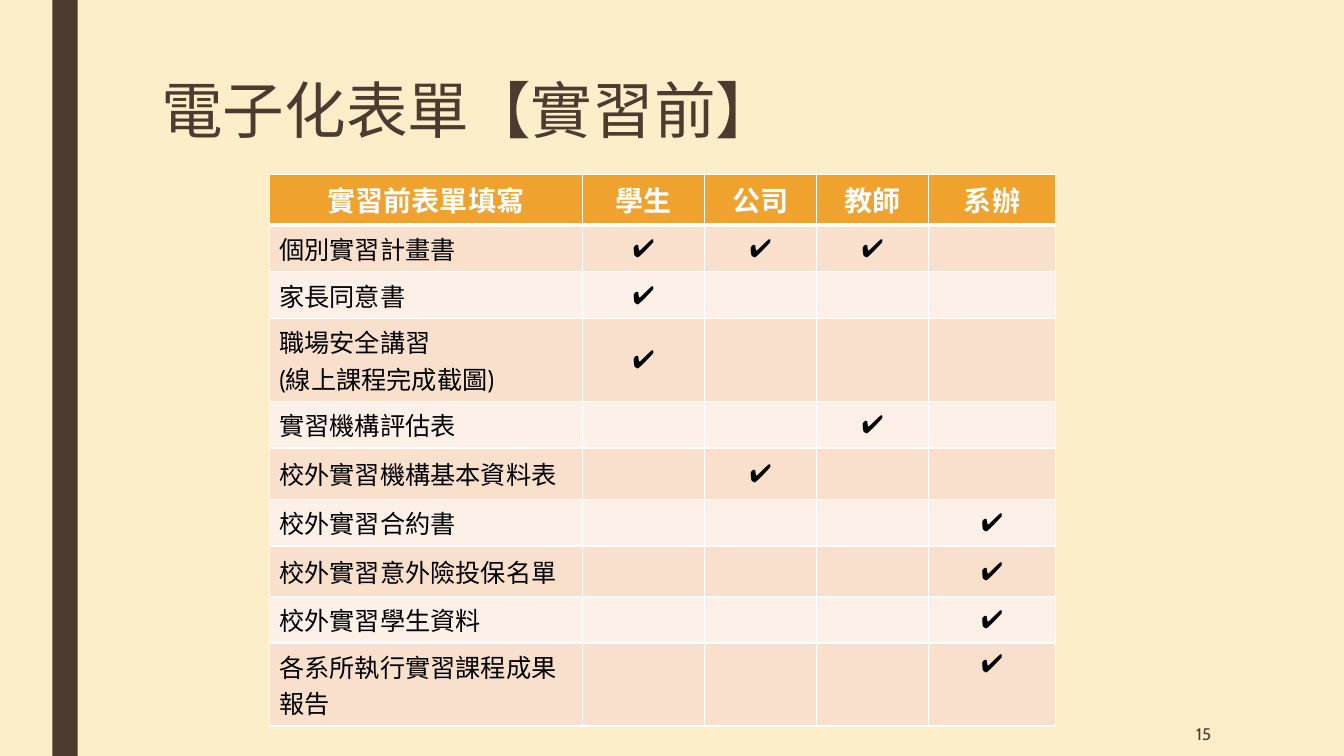
from dataclasses import dataclass

from lxml.etree import SubElement
from pptx import Presentation
from pptx.dml.color import RGBColor as RGB
from pptx.enum.shapes import MSO_SHAPE as Shape
from pptx.enum.text import MSO_ANCHOR as Anchor, MSO_AUTO_SIZE as AutoSize, PP_ALIGN as Align
from pptx.oxml.ns import qn
from pptx.util import Inches, Pt

TITLE = "電子化表單【實習前】"
PAGE_NUMBER = "15"
HEADINGS = ["實習前表單填寫", "學生", "公司", "教師", "系辦"]
FORMS = [
    (["個別實習計畫書"], {"學生", "公司", "教師"}, 0.42),
    (["家長同意書"], {"學生"}, 0.42),
    (["職場安全講習", "(線上課程完成截圖)"], {"學生"}, 0.72),
    (["實習機構評估表"], {"教師"}, 0.42),
    (["校外實習機構基本資料表"], {"公司"}, 0.51),
    (["校外實習合約書"], {"系辦"}, 0.42),
    (["校外實習意外險投保名單"], {"系辦"}, 0.5),
    (["校外實習學生資料"], {"系辦"}, 0.42),
    (["各系所執行實習課程成果報告"], {"系辦"}, 0.72),
]
COLUMN_WIDTHS = [3.11, 1.21, 1.11, 1.11, 1.26]
HEADING_HEIGHT = 0.45
CHECK = "✔"
ARIAL_FROM = 4


@dataclass(frozen=True)
class Theme:
    background: str = "FBEEC9"
    brown: str = "4E3B30"
    orange: str = "F0A22E"
    bands: tuple = ("F9E0CD", "FCF0E8")
    white: str = "FFFFFF"
    black: str = "000000"
    font: str = "Cabin"
    form_font: str = "Arial"
    title_size: int = 44
    heading_size: int = 20
    body_size: int = 18
    page_size: int = 12
    rule: int = 1
    heavy_rule: int = 3


THEME = Theme()


def write(frame, lines, size, color, align=Align.LEFT, bold=False, font=THEME.font):
    for index, line in enumerate(lines):
        paragraph = frame.add_paragraph() if index else frame.paragraphs[0]
        paragraph.alignment = align
        run = paragraph.add_run()
        run.text = line
        run.font.size = Pt(size)
        run.font.name = font
        run.font.bold = bold
        run.font.color.rgb = RGB.from_string(color)


def paint(cell, color, top, bottom):
    cell.fill.solid()
    cell.fill.fore_color.rgb = RGB.from_string(color)
    properties = cell._tc.get_or_add_tcPr()
    widths = {"a:lnL": THEME.rule, "a:lnR": THEME.rule, "a:lnT": top, "a:lnB": bottom}
    for position, (side, width) in enumerate(widths.items()):
        border = SubElement(properties, qn(side), w=str(Pt(width)))
        SubElement(SubElement(border, qn("a:solidFill")), qn("a:srgbClr"), val=THEME.white)
        properties.insert(position, border)


def add_bar(slide):
    bar = slide.shapes.add_shape(Shape.RECTANGLE, Inches(0.52), 0, Inches(0.25), Inches(7.5))
    bar.shadow.inherit = False
    bar.fill.solid()
    bar.fill.fore_color.rgb = RGB.from_string(THEME.brown)
    bar.line.fill.background()


def add_title(slide):
    title = slide.shapes.title
    title.left, title.top, title.width, title.height = map(Inches, (1.5, 0.75, 10.5, 1.62))
    frame = title.text_frame
    frame.auto_size = AutoSize.NONE
    frame.vertical_anchor = Anchor.TOP
    write(frame, [TITLE], THEME.title_size, THEME.brown)
    frame.paragraphs[0].line_spacing = 0.89


def add_forms(slide):
    heights = [HEADING_HEIGHT] + [height for _, _, height in FORMS]
    table = slide.shapes.add_table(
        len(heights), len(HEADINGS), Inches(2.67), Inches(1.73),
        Inches(sum(COLUMN_WIDTHS)), Inches(sum(heights)),
    ).table
    for column, width in zip(table.columns, COLUMN_WIDTHS):
        column.width = Inches(width)
    for row, height in zip(table.rows, heights):
        row.height = Inches(height)

    for column, heading in enumerate(HEADINGS):
        cell = table.cell(0, column)
        paint(cell, THEME.orange, THEME.rule, THEME.heavy_rule)
        write(cell.text_frame, [heading], THEME.heading_size, THEME.white, Align.CENTER, True)

    for row, (form, signers, _) in enumerate(FORMS, 1):
        for column, heading in enumerate(HEADINGS):
            cell = table.cell(row, column)
            top = THEME.heavy_rule if row == 1 else THEME.rule
            paint(cell, THEME.bands[(row - 1) % 2], top, THEME.rule)
            cell.vertical_anchor = Anchor.MIDDLE
            if column == 0:
                font = THEME.form_font if row >= ARIAL_FROM else THEME.font
                write(cell.text_frame, form, THEME.body_size, THEME.black, font=font)
            elif heading in signers:
                write(cell.text_frame, [CHECK], THEME.body_size, THEME.black, Align.CENTER)
                if row == len(FORMS):
                    cell.vertical_anchor = Anchor.TOP


def add_page_number(slide):
    frame = slide.shapes.add_textbox(*map(Inches, (10.36, 7.06, 1.75, 0.44))).text_frame
    frame.word_wrap = True
    frame.vertical_anchor = Anchor.MIDDLE
    write(frame, [PAGE_NUMBER], THEME.page_size, THEME.brown, Align.RIGHT)


def main():
    deck = Presentation()
    deck.slide_width, deck.slide_height = Inches(13.33), Inches(7.5)
    slide = deck.slides.add_slide(deck.slide_layouts[5])
    slide.background.fill.solid()
    slide.background.fill.fore_color.rgb = RGB.from_string(THEME.background)
    add_bar(slide)
    add_title(slide)
    add_forms(slide)
    add_page_number(slide)
    deck.save("out.pptx")


if __name__ == "__main__":
    main()
